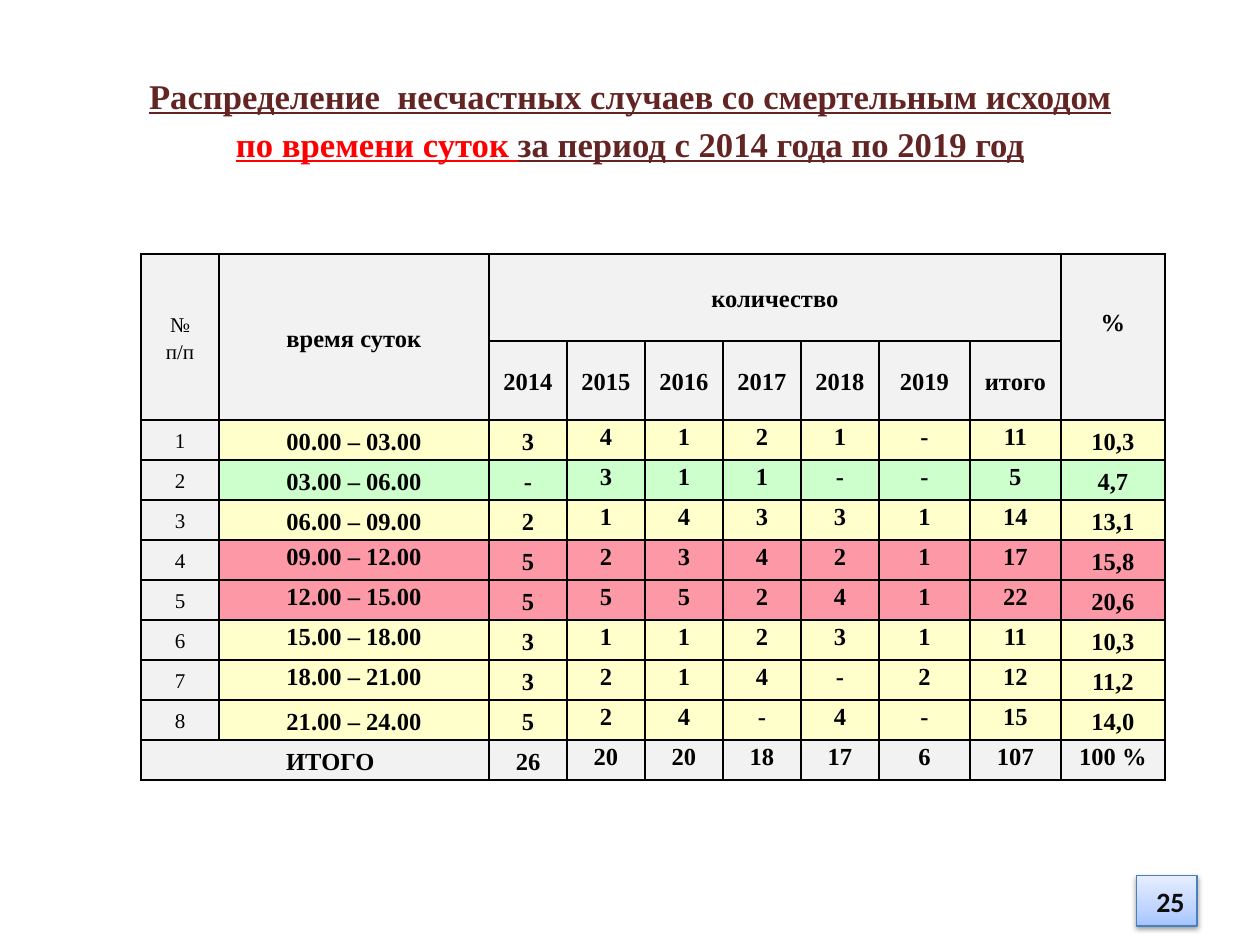
from copy import deepcopy
from pptx import Presentation
from pptx import util as u
from pptx.dml.color import RGBColor
from pptx.enum import shapes, text
from pptx.oxml import parse_xml
from pptx.oxml.ns import nsdecls

Pt = u.Pt
COLOURS = {
    "maroon": "632523", "red": "FF0000", "black": "000000", "ink": "0D0D0D",
    "grey": "F2F2F2", "yellow": "FFFFCC", "green": "CCFFCC", "pink": "FD99A7",
    "edge": "4B7EBC",
}
SERIF = "Times New Roman"

TITLE = [
    [("Распределение  несчастных случаев со смертельным исходом", "maroon")],
    [("по времени суток ", "red"), ("за период с 2014 года по 2019 год", "maroon")],
]
YEARS = ["2014", "2015", "2016", "2017", "2018", "2019", "итого"]
PERIODS = [
    ("00.00 – 03.00", "3 4 1 2 1 - 11 10,3", "yellow"),
    ("03.00 – 06.00", "- 3 1 1 - - 5 4,7", "green"),
    ("06.00 – 09.00", "2 1 4 3 3 1 14 13,1", "yellow"),
    ("09.00 – 12.00", "5 2 3 4 2 1 17 15,8", "pink"),
    ("12.00 – 15.00", "5 5 5 2 4 1 22 20,6", "pink"),
    ("15.00 – 18.00", "3 1 1 2 3 1 11 10,3", "yellow"),
    ("18.00 – 21.00", "3 2 1 4 - 2 12 11,2", "yellow"),
    ("21.00 – 24.00", "5 2 4 - 4 - 15 14,0", "yellow"),
]
TOTALS = ["26", "20", "20", "18", "17", "6", "107", "100 %"]
PAGE_NUMBER = "25"
BADGE_STOPS = [(0, "A4C4FF"), (0.35, "BFD4FF"), (1, "E6EEFF")]

COLUMN_WIDTHS = [44.57, 154.29] + [44.57] * 5 + [52, 52, 59.5]
ROW_HEIGHTS = [49.7, 45.2] + [22.86] * 9
TOP_ALIGNED_PERIODS = range(5, 9)
TOP_ALIGNED_COUNTS = range(3, 9)


def rgb(name):
    return RGBColor.from_string(COLOURS[name])


def set_font(font, colour, **values):
    for name, value in values.items():
        setattr(font, name, value)
    font.color.rgb = rgb(colour)


def add_title(slide):
    title = slide.shapes.title
    place = {"left": 36, "top": 21.6, "width": 648, "height": 90}
    for name, value in place.items():
        setattr(title, name, Pt(value))
    title.text_frame.vertical_anchor = text.MSO_ANCHOR.MIDDLE
    heading = title.text_frame.paragraphs[0]
    heading.alignment = text.PP_ALIGN.CENTER
    heading.line_spacing = 1.15
    for index, line in enumerate(TITLE):
        if index:
            heading.add_line_break()
        for words, colour in line:
            run = heading.add_run()
            run.text = words
            set_font(run.font, colour, name=SERIF, size=Pt(19.8), bold=True, underline=True)


def add_borders(cell):
    properties = cell._tc.get_or_add_tcPr()
    for side in ("lnL", "lnR", "lnT", "lnB"):
        properties.append(parse_xml(
            f'<a:{side} {nsdecls("a")} w="12700"><a:solidFill>'
            f'<a:srgbClr val="{COLOURS["black"]}"/></a:solidFill></a:{side}>'))


def fill_cell(cell, words, colour, top=False, small=False):
    cell.text = words
    cell.vertical_anchor = text.MSO_ANCHOR.TOP if top else text.MSO_ANCHOR.MIDDLE
    margins = {"margin_left": 5, "margin_right": 5, "margin_top": 0, "margin_bottom": 0}
    for name, value in margins.items():
        setattr(cell, name, Pt(value))
    for paragraph in cell.text_frame.paragraphs:
        paragraph.alignment = text.PP_ALIGN.CENTER
        paragraph.line_spacing = 1.15
        set_font(paragraph.font, "black", name=SERIF,
                 size=Pt(12 if small else 14), bold=not small)
        for run in paragraph.runs:
            set_font(run.font, "black", name=SERIF,
                     size=Pt(12 if small else 14), bold=not small)
    add_borders(cell)
    cell.fill.solid()
    cell.fill.fore_color.rgb = rgb(colour)


def add_accident_table(slide):
    table = slide.shapes.add_table(
        len(ROW_HEIGHTS), len(COLUMN_WIDTHS), Pt(80.6), Pt(145.2),
        Pt(sum(COLUMN_WIDTHS)), Pt(sum(ROW_HEIGHTS))).table
    table.first_row = table.horz_banding = False
    for column, width in zip(table.columns, COLUMN_WIDTHS):
        column.width = Pt(width)
    for row, height in zip(table.rows, ROW_HEIGHTS):
        row.height = Pt(height)

    last = len(ROW_HEIGHTS) - 1
    rows = [["№\nп/п", "время суток", "количество"] + [""] * 6 + ["%"],
            ["", ""] + YEARS + [""]]
    rows += [[str(number), period] + counts.split()
             for number, (period, counts, _) in enumerate(PERIODS, 1)]
    rows.append(["ИТОГО", ""] + TOTALS)
    row_colours = ["grey"] * 2 + [colour for *_, colour in PERIODS] + ["grey"]

    for r, (values, colour) in enumerate(zip(rows, row_colours)):
        for c, words in enumerate(values):
            top = r > 1 and (c in TOP_ALIGNED_COUNTS
                             or c == 1 and r in TOP_ALIGNED_PERIODS
                             or c == 9 and r == last)
            fill_cell(table.cell(r, c), words, "grey" if c == 0 else colour,
                      top, small=c == 0 and r < last)

    merges = [((0, 0), (1, 0)), ((0, 1), (1, 1)), ((0, 2), (0, 8)),
              ((0, 9), (1, 9)), ((last, 0), (last, 1))]
    for start, end in merges:
        table.cell(*start).merge(table.cell(*end))
    table.cell(0, 9).margin_bottom = Pt(18.5)
    table.cell(last, 0).margin_left = Pt(22.5)


def add_page_badge(slide):
    badge = slide.shapes.add_shape(
        shapes.MSO_SHAPE.RECTANGLE, Pt(649.4), Pt(500.4), Pt(34.6), Pt(28.8))
    badge.fill.gradient()
    badge.fill.gradient_angle = 90
    stop_list = badge._element.spPr.find(".//{*}gsLst")
    stop_list.append(deepcopy(stop_list[-1]))
    for stop, (position, colour) in zip(badge.fill.gradient_stops, BADGE_STOPS):
        stop.position = position
        stop.color.rgb = RGBColor.from_string(colour)
    badge.line.color.rgb = rgb("edge")
    badge.line.width = Pt(0.75)
    badge.shadow.inherit = False
    badge._element.spPr.find("{*}effectLst").append(parse_xml(
        f'<a:outerShdw {nsdecls("a")} blurRad="{Pt(3.1)}" dist="{Pt(1.6)}" dir="5400000" '
        f'rotWithShape="0"><a:srgbClr val="{COLOURS["black"]}"><a:alpha val="38000"/>'
        '</a:srgbClr></a:outerShdw>'))
    badge.text_frame.vertical_anchor = text.MSO_ANCHOR.MIDDLE
    number = badge.text_frame.paragraphs[0]
    number.alignment = text.PP_ALIGN.RIGHT
    run = number.add_run()
    run.text = PAGE_NUMBER
    set_font(run.font, "ink", name="Calibri", size=Pt(16), bold=True)


def main():
    deck = Presentation()
    deck.slide_width, deck.slide_height = Pt(720), Pt(540)
    slide = deck.slides.add_slide(deck.slide_layouts.get_by_name("Title Only"))
    add_title(slide)
    add_accident_table(slide)
    add_page_badge(slide)
    deck.save("out.pptx")


if __name__ == "__main__":
    main()
